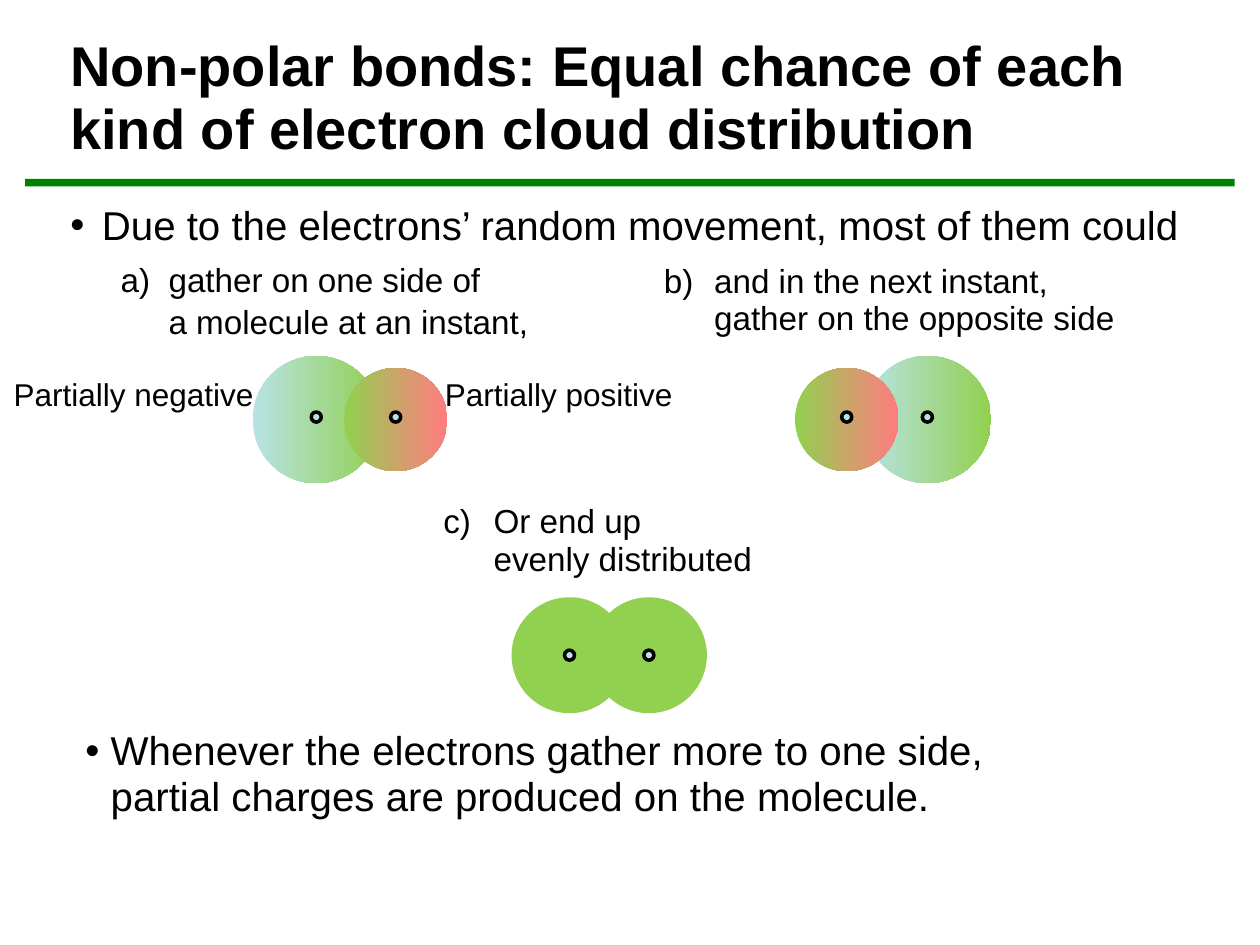
"""Build a slide on electron cloud distribution in non-polar bonds."""
from lxml import etree
from pptx import Presentation
from pptx.dml.color import RGBColor
from pptx.enum.shapes import MSO_SHAPE
from pptx.enum.text import MSO_ANCHOR, PP_ALIGN
from pptx.oxml.ns import qn
from pptx.util import Inches, Pt

OVAL, RECT = MSO_SHAPE.OVAL, MSO_SHAPE.RECTANGLE
TOP, BOTTOM = MSO_ANCHOR.TOP, MSO_ANCHOR.BOTTOM
LEFT, CENTER = PP_ALIGN.LEFT, PP_ALIGN.CENTER
BLACK, GREEN, BLUE, RED = "000000", "92D050", "B8E3E6", "FF7C80"
TIGHT = 0.94

TITLE = "Non-polar bonds: Equal chance of each kind of electron cloud distribution"
INTRO = "Due to the electrons’ random movement, most of them could"
CASES = [
    "gather on one side of\va molecule at an instant,",
    "and in the next instant,\vgather on the opposite side",
    "Or end up\vevenly distributed",
]
CLOSE = ("Whenever the electrons gather more to one side,\v"
         "partial charges are produced on the molecule.")
LABELS = [("Partially negative", 0, 2.12), ("Partially positive", 3.42, 2.03)]

# centre x, cloud y, nucleus y, diameter, left colour, right colour
CLOUDS = [
    (7.36, 3.33, 3.31, 1.01, BLUE, GREEN),
    (6.72, 3.33, 3.31, 0.82, GREEN, RED),
    (4.52, 5.2, 5.2, 0.92, GREEN, GREEN),
    (5.15, 5.2, 5.2, 0.92, GREEN, GREEN),
    (2.51, 3.33, 3.31, 1.01, BLUE, GREEN),
    (3.14, 3.33, 3.31, 0.82, GREEN, RED),
]


def color(code):
    return RGBColor.from_string(code)


def shape(kind, x, y, w, h, left, right=None):
    item = slide.shapes.add_shape(kind, *map(Inches, (x, y, w, h)))
    item.shadow.inherit = False
    item.line.fill.background()
    if right in (None, left):
        item.fill.solid()
        item.fill.fore_color.rgb = color(left)
    else:
        item.fill.gradient()
        item.fill.gradient_angle = 0
        for stop, code in zip(item.fill.gradient_stops, (left, right)):
            stop.color.rgb = color(code)
    return item


def disc(x, y, size, *codes):
    return shape(OVAL, x - size / 2, y - size / 2, size, size, *codes)


def frame(x, y, w, h, wrap=True, anchor=TOP):
    box = slide.shapes.add_textbox(*map(Inches, (x, y, w, h))).text_frame
    box.word_wrap, box.vertical_anchor = wrap, anchor
    return box


def write(para, text, size, gap=TIGHT, bold=False, align=LEFT, before=0):
    para.text, para.alignment = text, align
    para.line_spacing, para.space_before = gap, Pt(before)
    for run in para.runs:
        run.font.name, run.font.size, run.font.bold = "Arial", Pt(size), bold
        run.font.color.rgb = color(BLACK)


def mark(para, indent, hang, start=0):
    props = para._p.get_or_add_pPr()
    props.set("marL", str(Inches(indent)))
    props.set("indent", str(-Inches(hang)))
    font = etree.SubElement(props, qn("a:buFont"))
    font.set("typeface", "Arial")
    if start:
        auto = etree.SubElement(props, qn("a:buAutoNum"))
        auto.set("type", "alphaLcParenR")
        auto.set("startAt", str(start))
    else:
        etree.SubElement(props, qn("a:buChar")).set("char", "•")


deck = Presentation()
deck.slide_width, deck.slide_height = Inches(10), Inches(7.5)
slide = deck.slides.add_slide(deck.slide_layouts[6])

shape(RECT, 0.2, 1.42, 9.6, 0.06, "008000")
write(frame(0.46, 0.17, 9.37, 1.17, anchor=BOTTOM).paragraphs[0], TITLE, 32, bold=True)

body = frame(0.46, 1.54, 9.12, 2.25)
mark(body.paragraphs[0], 0.25, 0.25)
write(body.paragraphs[0], INTRO, 23, 1)
first = body.add_paragraph()
mark(first, 0.78, 0.38, 1)
write(first, CASES[0], 19, 1.05, before=5)

for start, (x, y, w) in enumerate([(5.17, 2.04, 3.83), (3.42, 3.95, 2.83)], 2):
    para = frame(x, y, w, 0.68).paragraphs[0]
    mark(para, 0.4, 0.4, start)
    write(para, CASES[start - 1], 19)

last = frame(0.58, 5.74, 7.58, 0.8, wrap=False).paragraphs[0]
mark(last, 0.2, 0.2)
write(last, CLOSE, 23)

for x, y, core, size, left, right in CLOUDS:
    disc(x, y, size, left, right)
    dot = disc(x, core, 0.08, "BBE0E3")
    dot.line.color.rgb, dot.line.width = color(BLACK), Pt(2)

for text, x, w in LABELS:
    write(frame(x, 2.95, w, 0.37, wrap=False).paragraphs[0], text, 18, align=CENTER)

deck.save("out.pptx")
